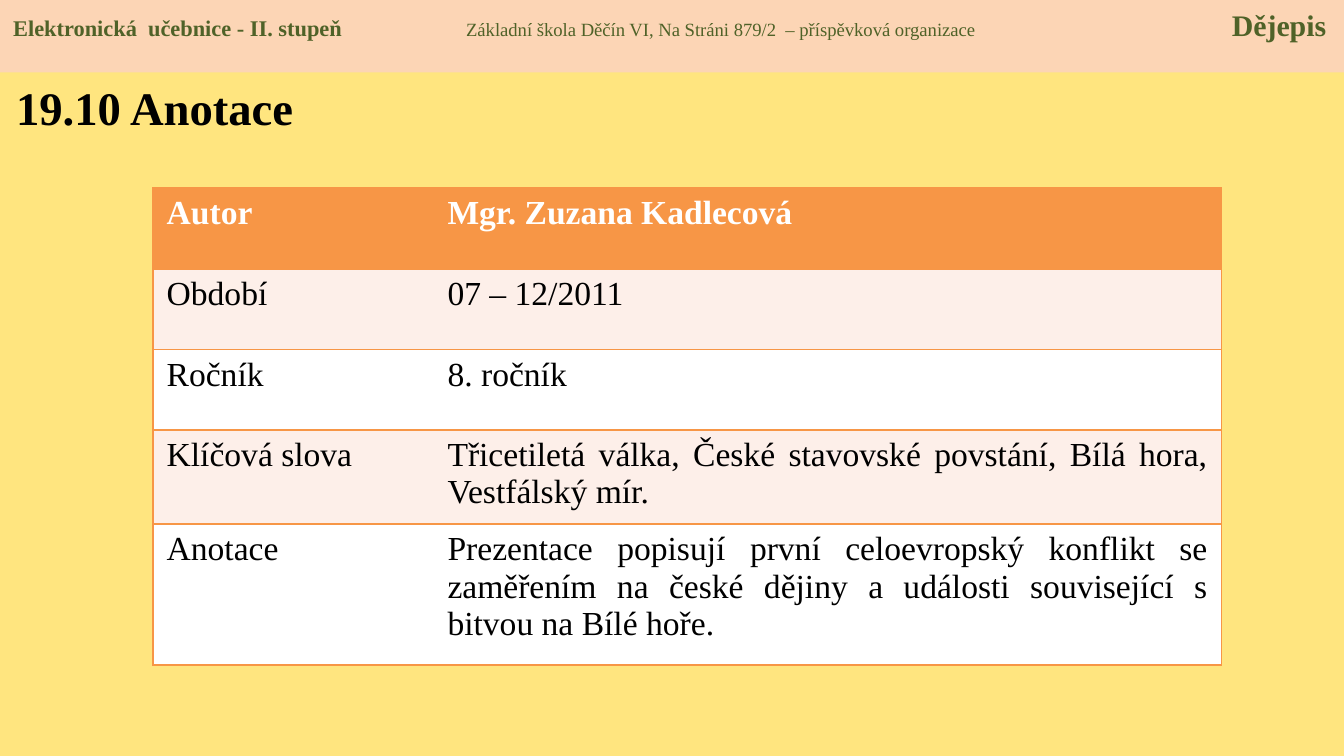
import pptx
import pptx.util
import pptx.dml.color
import pptx.enum.shapes
import pptx.enum.text
import pptx.oxml
import pptx.oxml.ns

FONT = "Times New Roman"
ORANGE, GREEN = "F79646", "4F6228"
WIDE = 10
HIGH = WIDE * 9 / 16

# Content: header runs are (text, size, bold)
HEADER = [
    ("Elektronická  učebnice - II. stupeň", 12, True),
    ("\tZákladní škola Děčín VI, Na Stráni 879/2  – příspěvková organizace", 10, False),
    ("\tDějepis", 16, True),
]
TABS = [(3.37, "l"), (9.77, "r")]
TITLE = "19.10 Anotace"
# Table rows are (label, value, height, justified)
ROWS = [
    ("Autor", "Mgr. Zuzana Kadlecová", 0.6, False),
    ("Období", "07 – 12/2011", 0.6, False),
    ("Ročník", "8. ročník", 0.6, False),
    ("Klíčová slova", "Třicetiletá válka, České stavovské povstání, "
     "Bílá hora, Vestfálský mír.", 0.7, True),
    ("Anotace", "Prezentace popisují první celoevropský konflikt se zaměřením "
     "na české dějiny a události související s bitvou na Bílé hoře.", 1.05, True),
]
COLS = [2.09, 5.86]

inch = pptx.util.Inches
align = pptx.enum.text.PP_ALIGN
anchor = pptx.enum.text.MSO_ANCHOR


def paint(fill, color):
    fill.solid()
    fill.fore_color.rgb = pptx.dml.color.RGBColor.from_string(color)


def add_run(para, text, size, color, bold=False):
    run = para.add_run()
    run.text = text
    run.font.name = FONT
    run.font.size = pptx.util.Pt(size)
    run.font.bold = bold
    paint(run.font.fill, color)


def set_tabs(para, stops):
    tabs = pptx.oxml.parse_xml(f"<a:tabLst {pptx.oxml.ns.nsdecls('a')}/>")
    for pos, side in stops:
        tab = tabs.makeelement(pptx.oxml.ns.qn("a:tab"),
                               {"pos": str(inch(pos)), "algn": side})
        tabs.append(tab)
    para._p.get_or_add_pPr().append(tabs)


def add_lines(cell, sides):
    props = cell._tc.get_or_add_tcPr()
    for spot, side in enumerate("LRTB"):
        width, fill = ((12700, f'<a:solidFill><a:srgbClr val="{ORANGE}"/></a:solidFill>')
                       if side in sides else (0, "<a:noFill/>"))
        props.insert(spot, pptx.oxml.parse_xml(
            f'<a:ln{side} {pptx.oxml.ns.nsdecls("a")} w="{width}">{fill}</a:ln{side}>'))


deck = pptx.Presentation()
deck.slide_width, deck.slide_height = inch(WIDE), inch(HIGH)
slide = deck.slides.add_slide(deck.slide_layouts[5])
paint(slide.background.fill, "FFE57F")

# Header band
band = slide.shapes.add_shape(pptx.enum.shapes.MSO_SHAPE.RECTANGLE,
                              0, 0, inch(WIDE), inch(0.54))
band.shadow.inherit = False
paint(band.fill, "FCD5B5")
band.line.fill.background()
frame = band.text_frame
frame.vertical_anchor = anchor.TOP
frame.margin_top = inch(0.05)
para = frame.paragraphs[0]
para.alignment = align.LEFT
set_tabs(para, TABS)
for text, size, bold in HEADER:
    add_run(para, text, size, GREEN, bold)

# Title
title = slide.shapes.title
title.left, title.top = inch(0.02), inch(0.55)
title.width, title.height = inch(4.19), inch(0.65)
frame = title.text_frame
frame.auto_size = pptx.enum.text.MSO_AUTO_SIZE.NONE
frame.vertical_anchor = anchor.TOP
frame.margin_top = inch(0.04)
frame.paragraphs[0].alignment = align.LEFT
add_run(frame.paragraphs[0], TITLE, 25, "000000", True)

# Table
table = slide.shapes.add_table(
    len(ROWS), len(COLS), inch(1.14), inch(1.4),
    inch(sum(COLS)), inch(sum(row[2] for row in ROWS))).table
table.horz_banding = False
for col, width in zip(table.columns, COLS):
    col.width = inch(width)
for r, (label, value, height, just) in enumerate(ROWS):
    table.rows[r].height = inch(height)
    head = r == 0
    back = ORANGE if head else ("FFFFFF", "FDEFE9")[r % 2]
    for c, text in enumerate((label, value)):
        cell = table.cell(r, c)
        paint(cell.fill, back)
        add_lines(cell, "TB" + "LR"[c])
        para = cell.text_frame.paragraphs[0]
        para.alignment = align.JUSTIFY if just and c else align.LEFT
        add_run(para, text, 18, "FFFFFF" if head else "000000", head)

deck.save("out.pptx")
